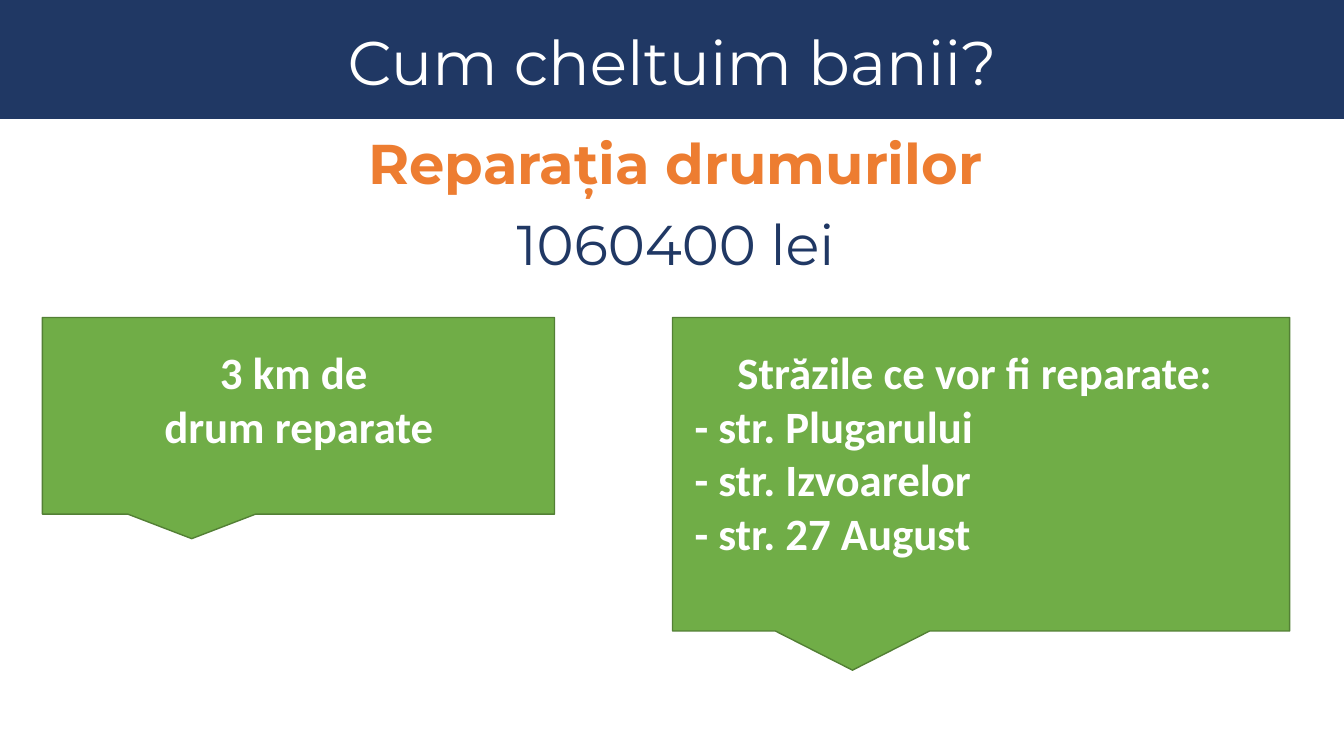
from pptx import Presentation
from pptx import util as u
from pptx.dml import color
from pptx.enum import shapes, text

SCALE = 9144
NAVY, ORANGE, GREEN, EDGE, WHITE = "203864", "ED7D31", "70AD47", "538035", "FFFFFF"
LEFT, MID = text.PP_ALIGN.LEFT, text.PP_ALIGN.CENTER
HEAD = {"name": "Montserrat", "size": u.Pt(40), "bold": False}
NOTE = {"name": "Calibri", "size": u.Pt(32), "bold": True}


def px(*nums):
    return [u.Emu(n * SCALE) for n in nums]


def rgb(code):
    return color.RGBColor.from_string(code)


def place(item, box):
    for key, val in zip(("left", "top", "width", "height"), px(*box)):
        setattr(item, key, val)


def write(frame, lines, form, hue):
    frame.word_wrap = True
    for i, (line, align) in enumerate(lines):
        para = frame.add_paragraph() if i else frame.paragraphs[0]
        para.text = line
        para.alignment = align
        for run in para.runs:
            for key, val in form.items():
                setattr(run.font, key, val)
            run.font.color.rgb = rgb(hue)


def add_text(slide, box, lines, form, hue):
    write(slide.shapes.add_textbox(*px(*box)).text_frame, lines, form, hue)


def add_block(slide, kind, box, fill, edge=None):
    block = slide.shapes.add_shape(kind, *px(*box))
    block.shadow.inherit = False
    block.fill.solid()
    block.fill.fore_color.rgb = rgb(fill)
    if edge:
        block.line.color.rgb = rgb(edge)
        block.line.width = u.Pt(1)
    else:
        block.line.fill.background()
    return block


def add_title(slide, box, line):
    title = slide.shapes.title
    place(title, box)
    frame = title.text_frame
    write(frame, [(line, MID)], {**HEAD, "size": u.Pt(44)}, WHITE)
    frame.auto_size = text.MSO_AUTO_SIZE.NONE
    frame.vertical_anchor = text.MSO_ANCHOR.MIDDLE
    frame.paragraphs[0].line_spacing = 0.9
    bar = add_block(slide, shapes.MSO_SHAPE.RECTANGLE, (0, 0, 1333, 118), NAVY)
    title.element.addprevious(bar.element)


def add_callout(slide, box, area, lines):
    kind = shapes.MSO_SHAPE.RECTANGULAR_CALLOUT
    add_block(slide, kind, box, GREEN, EDGE)
    add_text(slide, area, lines, NOTE, WHITE)


def main():
    deck = Presentation()
    deck.slide_width, deck.slide_height = px(1333, 750)
    slide = deck.slides.add_slide(deck.slide_layouts[5])
    add_title(slide, (17, 25, 1300, 81), "Cum cheltuim banii?")
    add_text(slide, (320, 203, 700, 77), [("1060400 lei", MID)], HEAD, NAVY)
    add_text(slide, (23, 123, 1294, 77), [("Reparația drumurilor", MID)],
             {**HEAD, "bold": True}, ORANGE)
    add_callout(slide, (42, 315, 508, 195), (55, 337, 483, 118),
                [("3 km de \vdrum reparate", MID)])
    add_callout(slide, (667, 315, 612, 311), (679, 337, 576, 226),
                [("Străzile ce vor fi reparate:", MID),
                 ("- str. Plugarului\v- str. Izvoarelor", LEFT),
                 ("- str. 27 August", LEFT)])
    deck.save("out.pptx")


if __name__ == "__main__":
    main()
